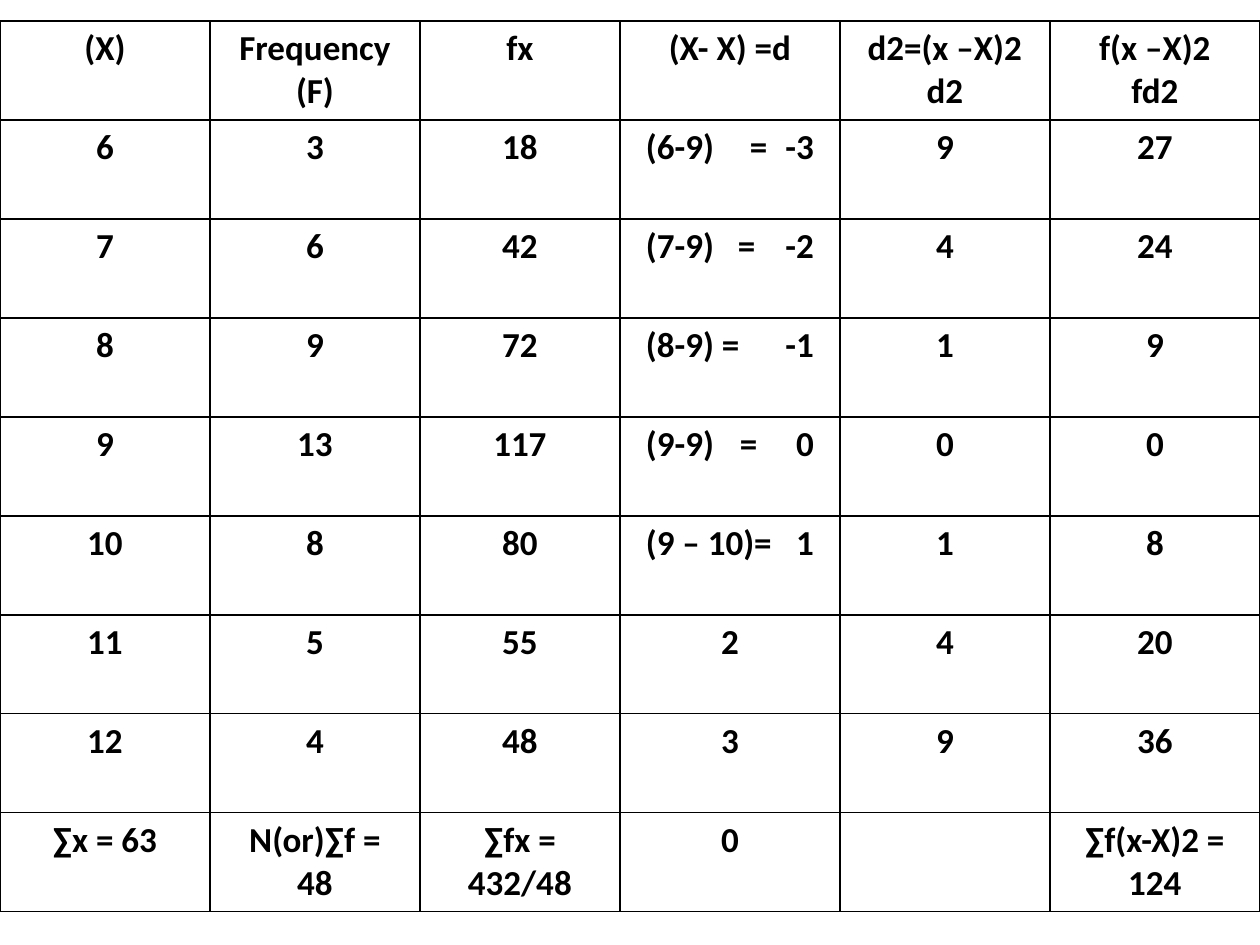
"""Build a slide with a frequency table for working out variance."""
from lxml.etree import SubElement
from pptx import Presentation
from pptx.dml.color import RGBColor
from pptx.enum.text import PP_ALIGN
from pptx.oxml.ns import qn
from pptx.util import Pt

BLACK = RGBColor(0, 0, 0)
SCALE = 914400 / 126
TOP, HIGH = 21, 99
WIDTHS = [210, 210, 200, 220, 210, 210]
INSET, RESULT = 26, 168

ROWS = [
    ["(X)", "Frequency (F)", "fx", "(X- X) =d", "d2=(x –X)2\nd2", "f(x –X)2\nfd2"],
    ["6", "3", "18", "(6-9)\t=\t-3", "9", "27"],
    ["7", "6", "42", "(7-9)\t=\t-2", "4", "24"],
    ["8", "9", "72", "(8-9) =\t-1", "1", "9"],
    ["9", "13", "117", "(9-9)\t=\t0", "0", "0"],
    ["10", "8", "80", "(9 – 10)=\t1", "1", "8"],
    ["11", "5", "55", "2", "4", "20"],
    ["12", "4", "48", "3", "9", "36"],
    ["∑x = 63", "N(or)∑f =\v48", "∑fx =\v432/48", "0", "", "∑f(x-X)2 = 124"],
]
EQUALS = {1: 104, 2: 92, 4: 94}


def px(n):
    return round(n * SCALE)


def write(cell, text, size=20, font="Calibri", color=BLACK, bold=True,
          align=PP_ALIGN.CENTER, stops=()):
    cell.text_frame.text = text
    for para in cell.text_frame.paragraphs:
        para.alignment = align
        if stops:
            tabs = SubElement(para._p.get_or_add_pPr(), qn("a:tabLst"))
            for pos, side in stops:
                SubElement(tabs, qn("a:tab"), pos=str(px(pos)), algn=side)
        for run in para.runs:
            run.font.size, run.font.name = Pt(size), font
            run.font.bold, run.font.color.rgb = bold, color


def frame(cell, color=BLACK, width=1):
    props = cell._tc.get_or_add_tcPr()
    for side in "LRTB":
        line = SubElement(props, qn(f"a:ln{side}"), w=str(Pt(width)))
        fill = SubElement(line, qn("a:solidFill"))
        SubElement(fill, qn("a:srgbClr"), val=str(color))
    cell.fill.background()


def main():
    deck = Presentation()
    deck.slide_width, deck.slide_height = px(1260), px(945)
    slide = deck.slides.add_slide(deck.slide_layouts[6])
    table = slide.shapes.add_table(
        len(ROWS), len(WIDTHS), 0, px(TOP), px(sum(WIDTHS)), px(HIGH * len(ROWS))
    ).table
    table.first_row = table.horz_banding = False
    for col, wide in zip(table.columns, WIDTHS):
        col.width = px(wide)
    for r, texts in enumerate(ROWS):
        table.rows[r].height = px(HIGH)
        for c, text in enumerate(texts):
            cell = table.cell(r, c)
            frame(cell)
            if "\t" in text:
                cell.margin_left = px(INSET)
                stops = [(EQUALS[r], "l")] if r in EQUALS else []
                write(cell, text, align=PP_ALIGN.LEFT, stops=stops + [(RESULT, "r")])
            else:
                write(cell, text)
    deck.save("out.pptx")


if __name__ == "__main__":
    main()
